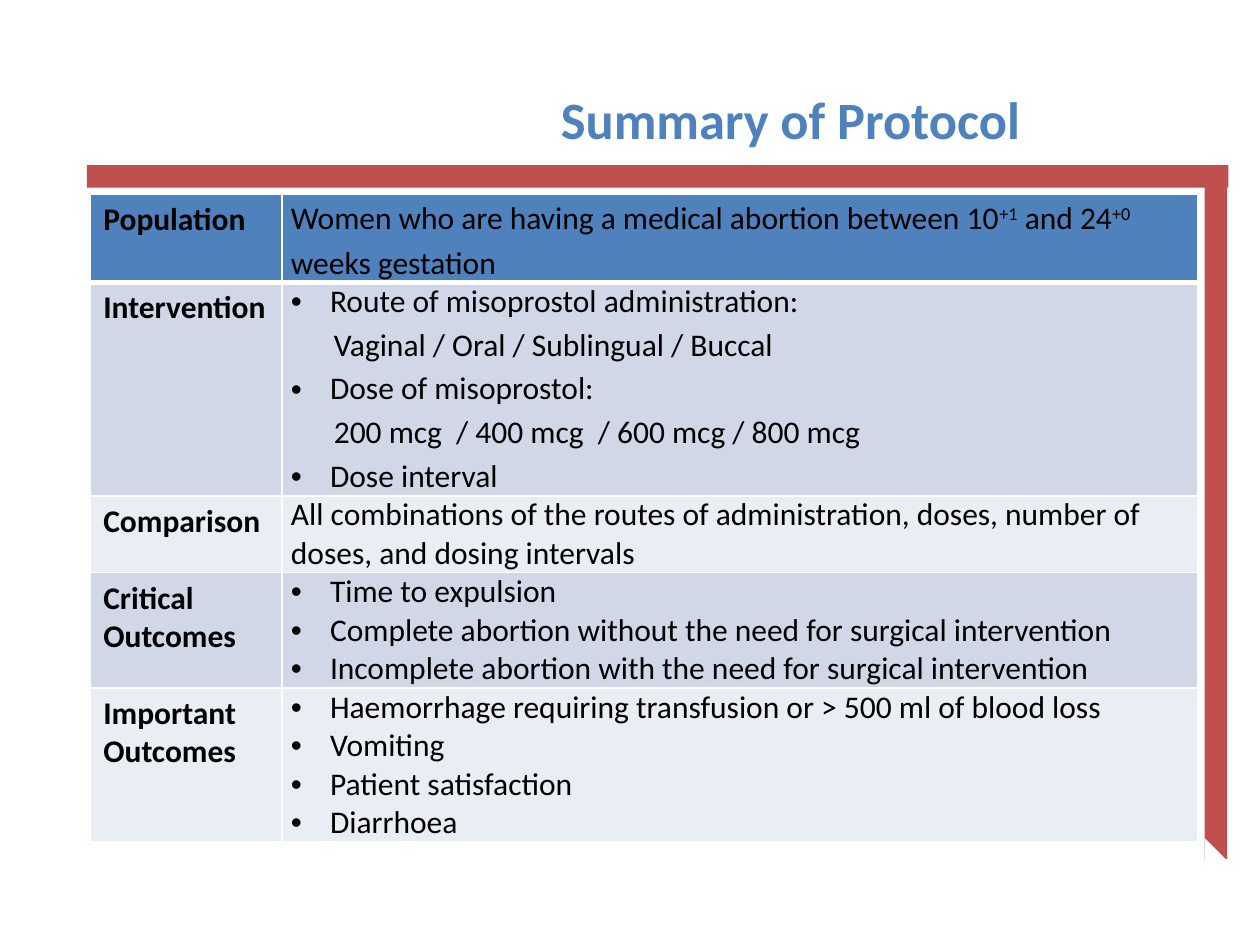
import pptx
import pptx.dml.color
import pptx.enum.shapes
import pptx.enum.text
import pptx.oxml.ns
import pptx.util
from lxml import etree

Inches = pptx.util.Inches
Pt = pptx.util.Pt
RGBColor = pptx.dml.color.RGBColor
Shapes = pptx.enum.shapes.MSO_SHAPE
qn = pptx.oxml.ns.qn

BLUE = RGBColor(0x4F, 0x81, 0xBD)
RED = RGBColor(0xC0, 0x50, 0x4D)
BAND_DARK = RGBColor(0xD0, 0xD8, 0xE8)
BAND_LIGHT = RGBColor(0xE9, 0xED, 0xF4)
BLACK = RGBColor(0, 0, 0)
WHITE = RGBColor(0xFF, 0xFF, 0xFF)

PLAIN, BULLET, INDENTED = "plain", "bullet", "indented"
MARGINS = {PLAIN: (0, 0), BULLET: (0.31, -0.31), INDENTED: (0.34, 0)}

POPULATION = [
    ("Women who are having a medical abortion between 10", False),
    ("+1", True),
    (" and 24", False),
    ("+0", True),
    (" weeks gestation", False),
]
ROWS = [
    ("Population", 0.7, {"line_spacing": 1.15}, [(PLAIN, POPULATION)]),
    ("Intervention", 1.6, {"space_before": Pt(2), "space_after": Pt(1)}, [
        (BULLET, "Route of misoprostol administration:"),
        (INDENTED, "Vaginal / Oral / Sublingual / Buccal"),
        (BULLET, "Dose of misoprostol:"),
        (INDENTED, "200 mcg  / 400 mcg  / 600 mcg / 800 mcg"),
        (BULLET, "Dose interval"),
    ]),
    ("Comparison", 0.54, {"space_before": Pt(2), "space_after": Pt(1)}, [
        (PLAIN, "All combinations of the routes of administration, doses, "
                "number of doses, and dosing intervals"),
    ]),
    ("Critical Outcomes", 0.81, {}, [
        (BULLET, "Time to expulsion"),
        (BULLET, "Complete abortion without the need for surgical intervention"),
        (BULLET, "Incomplete abortion with the need for surgical intervention"),
    ]),
    ("Important Outcomes", 1.15, {}, [
        (BULLET, "Haemorrhage requiring transfusion or > 500 ml of blood loss"),
        (BULLET, "Vomiting"),
        (BULLET, "Patient satisfaction"),
        (BULLET, "Diarrhoea"),
    ]),
]


class SlideBuilder:
    font_name = "Calibri"
    body_size = 18
    title_size = 30

    def __init__(self, slide):
        self.slide = slide

    def style_font(self, paragraph, size, color, bold):
        font = paragraph.font
        font.name = self.font_name
        font.size = Pt(size)
        font.bold = bold
        font.color.rgb = color

    def set_indent(self, paragraph, left, first=0):
        properties = paragraph._p.get_or_add_pPr()
        properties.set("marL", str(Inches(left)))
        properties.set("indent", str(Inches(first)))
        return properties

    def title(self, text, left, top, width, height):
        shape = self.slide.shapes.title
        shape.left, shape.top = Inches(left), Inches(top)
        shape.width, shape.height = Inches(width), Inches(height)
        frame = shape.text_frame
        frame.text = text
        frame.word_wrap = True
        frame.auto_size = pptx.enum.text.MSO_AUTO_SIZE.NONE
        frame.vertical_anchor = pptx.enum.text.MSO_ANCHOR.BOTTOM
        paragraph = frame.paragraphs[0]
        paragraph.alignment = pptx.enum.text.PP_ALIGN.CENTER
        self.set_indent(paragraph, 0.26)
        self.style_font(paragraph, self.title_size, BLUE, True)

    def shape(self, kind, color, left, top, width, height):
        shape = self.slide.shapes.add_shape(
            kind, Inches(left), Inches(top), Inches(width), Inches(height))
        shape.shadow.inherit = False
        shape.fill.solid()
        shape.fill.fore_color.rgb = color
        shape.line.fill.background()
        return shape

    def cell_style(self, cell, color, widths):
        properties = cell._tc.get_or_add_tcPr()
        for side, width in zip("LRTB", widths):
            line = etree.SubElement(properties, qn(f"a:ln{side}"), w=str(Pt(width)))
            fill = etree.SubElement(line, qn("a:solidFill"))
            etree.SubElement(fill, qn("a:srgbClr"), val=str(WHITE))
        cell.fill.solid()
        cell.fill.fore_color.rgb = color

    def cell_paragraph(self, paragraph, kind, content, spacing):
        properties = self.set_indent(paragraph, *MARGINS[kind])
        if kind == BULLET:
            etree.SubElement(properties, qn("a:buFont"), typeface="Arial")
            etree.SubElement(properties, qn("a:buChar"), char="•")
        for name, value in spacing.items():
            setattr(paragraph, name, value)
        runs = [(content, False)] if isinstance(content, str) else content
        for text, raised in runs:
            run = paragraph.add_run()
            run.text = text
            if raised:
                run._r.get_or_add_rPr().set("baseline", "30000")
        self.style_font(paragraph, self.body_size, BLACK, False)

    def table(self, rows, left, top, column_widths):
        heights = [height for _, height, _, _ in rows]
        table = self.slide.shapes.add_table(
            len(rows), len(column_widths), Inches(left), Inches(top),
            Inches(sum(column_widths)), Inches(sum(heights))).table
        for column, width in zip(table.columns, column_widths):
            column.width = Inches(width)
        for index, (label, height, spacing, paragraphs) in enumerate(rows):
            table.rows[index].height = Inches(height)
            label_cell, detail_cell = table.cell(index, 0), table.cell(index, 1)
            color = BLUE if index == 0 else (BAND_LIGHT, BAND_DARK)[index % 2]
            top_width = 3 if index == 1 else 1
            bottom_width = 3 if index == 0 else 1
            for cell in (label_cell, detail_cell):
                self.cell_style(cell, color, (1, 1, top_width, bottom_width))
            label_cell.text = label
            self.style_font(label_cell.text_frame.paragraphs[0],
                            self.body_size, BLACK, True)
            detail_cell.margin_left = detail_cell.margin_right = Inches(0.07)
            detail_cell.margin_top = detail_cell.margin_bottom = 0
            frame = detail_cell.text_frame
            for position, (kind, content) in enumerate(paragraphs):
                paragraph = frame.add_paragraph() if position else frame.paragraphs[0]
                self.cell_paragraph(paragraph, kind, content, spacing)


def main():
    presentation = pptx.Presentation()
    presentation.slide_width = Inches(10)
    presentation.slide_height = Inches(7.5)
    slide = presentation.slides.add_slide(presentation.slide_layouts[5])
    builder = SlideBuilder(slide)
    builder.shape(Shapes.RECTANGLE, RED, 0.69, 1.31, 9.06, 0.18)
    builder.shape(Shapes.RECTANGLE, RED, 9.56, 1.31, 0.18, 5.51)
    corner = builder.shape(Shapes.ISOSCELES_TRIANGLE, WHITE, 9.56, 6.65, 0.18, 0.18)
    corner.adjustments[0] = 0
    builder.title("Summary of Protocol", 2.59, 0.2, 7.11, 1.04)
    builder.table(ROWS, 0.72, 1.54, (1.52, 7.27))
    presentation.save("out.pptx")


if __name__ == "__main__":
    main()
